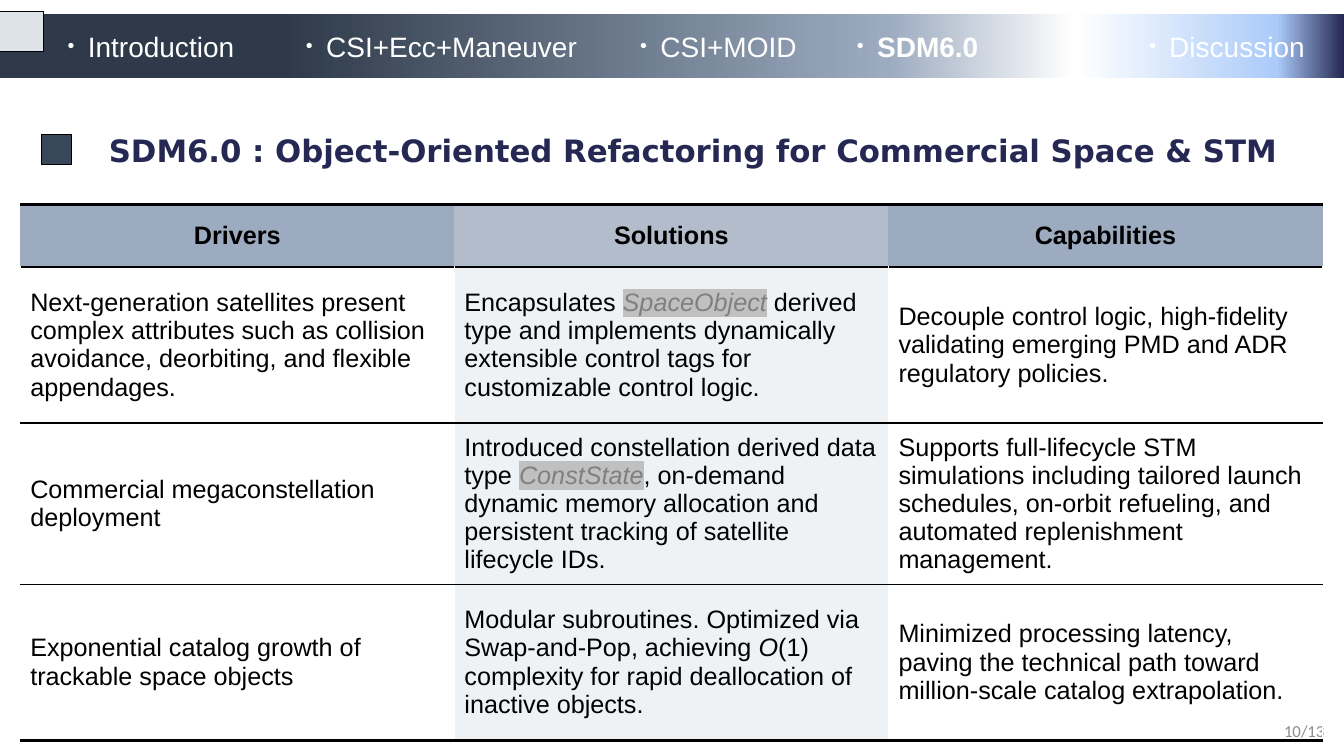
from lxml import etree
from pptx import Presentation
from pptx.dml.color import RGBColor
from pptx.enum.shapes import MSO_SHAPE
from pptx.enum.text import MSO_ANCHOR, MSO_AUTO_SIZE, PP_ALIGN
from pptx.oxml.ns import qn
from pptx.util import Cm, Pt

RECT = MSO_SHAPE.RECTANGLE
TOP, MIDDLE = MSO_ANCHOR.TOP, MSO_ANCHOR.MIDDLE
LEFT, CENTER, RIGHT = PP_ALIGN.LEFT, PP_ALIGN.CENTER, PP_ALIGN.RIGHT

# Content
TITLE = "SDM6.0 : Object-Oriented Refactoring for Commercial Space & STM"
PAGE_NUMBER = "10/13"
SECTIONS = [  # name, left, width
    ("Introduction", 1.04, 5.87),
    ("CSI+Ecc+Maneuver", 6.48, 9.63),
    ("CSI+MOID", 15.62, 5.31),
    ("SDM6.0", 20.88, 4.83),
    ("Discussion", 28.32, 5.54),
]
CURRENT_SECTION = "SDM6.0"
HEADERS = ["Drivers", "Solutions", "Capabilities"]
ROWS = [  # each cell is a list of (text, style) spans
    [
        [("Next-generation satellites present complex attributes such as collision "
          "avoidance, deorbiting, and flexible appendages.", "plain")],
        [("Encapsulates ", "plain"), ("SpaceObject", "code"),
         (" derived type and implements dynamically extensible control tags for "
          "customizable control logic.", "plain")],
        [("Decouple control logic, high-fidelity validating emerging PMD and ADR "
          "regulatory policies.", "plain")],
    ],
    [
        [("Commercial megaconstellation deployment", "plain")],
        [("Introduced constellation derived data type ", "plain"), ("ConstState", "code"),
         (", on-demand dynamic memory allocation and persistent tracking of satellite "
          "lifecycle IDs.", "plain")],
        [("Supports full-lifecycle STM simulations including tailored launch schedules, "
          "on-orbit refueling, and automated replenishment management.", "plain")],
    ],
    [
        [("Exponential catalog growth of trackable space objects", "plain")],
        [("Modular subroutines. Optimized via Swap-and-Pop, achieving ", "plain"),
         ("O", "italic"),
         ("(1) complexity for rapid deallocation of inactive objects.", "plain")],
        [("Minimized processing latency, paving the technical path toward "
          "million-scale catalog extrapolation.", "plain")],
    ],
]

# Formats
BLACK, WHITE, NAVY = "000000", "FFFFFF", "242852"
BAR_STOPS = [(21, "2E3A49"), (66, "9CABC0"), (80, WHITE), (95, "ACCBF9"), (100, NAVY)]
HEADER_FILLS = ["9CABC0", "B2BCCB", "9CABC0"]
BODY_FILLS = [None, "EFF2F5", None]
HIGHLIGHT = "C0C0C0"
BODY_FONT = {"name": "Arial", "size": Pt(18), "bold": False}
STYLES = {
    "header": (BODY_FONT | {"bold": True}, BLACK),
    "plain": (BODY_FONT, BLACK),
    "italic": (BODY_FONT | {"italic": True}, BLACK),
    "code": (BODY_FONT | {"italic": True}, "808080"),
    "section": ({"name": "Arial", "size": Pt(20), "bold": False}, WHITE),
    "current": ({"name": "Arial", "size": Pt(20), "bold": True}, WHITE),
    "title": ({"name": "DejaVu Sans", "size": Pt(22), "bold": True}, NAVY),
    "page": ({"name": "Calibri", "size": Pt(12)}, "8C8C8C"),
}
THICK, THIN = 2.25, 1
NO_STYLE_NO_GRID = "{2D5ABB26-0587-4C30-8999-92F81FD0307C}"

# Layout in centimetres
SLIDE_WIDTH, SLIDE_HEIGHT = 33.87, 19.05
SECTION_TOP, SECTION_HEIGHT = 0.48, 1.35
TABLE_LEFT, TABLE_TOP = 0.51, 5.16
COLUMN_WIDTH, HEADER_HEIGHT, ROW_HEIGHT = 10.94, 1.57, 3.93


def rgb(color):
    return RGBColor.from_string(color)


def set_all(target, values):
    for name, value in values.items():
        setattr(target, name, value)


def add_child(parent, tag, **attributes):
    return etree.SubElement(parent, qn(tag), **attributes)


def add_rect(slide, place, fill=None, line_width=None):
    shape = slide.shapes.add_shape(RECT, *map(Cm, place))
    shape.shadow.inherit = False
    if fill:
        shape.fill.solid()
        shape.fill.fore_color.rgb = rgb(fill)
    if line_width:
        shape.line.color.rgb = rgb(BLACK)
        shape.line.width = Pt(line_width)
    else:
        shape.line.fill.background()
    return shape


def write(para, spans, align):
    para.alignment = align
    for text, style in spans:
        span = para.add_run()
        span.text = text
        font_values, color = STYLES[style]
        set_all(span.font, font_values)
        span.font.color.rgb = rgb(color)
        if style == "code":
            fill = span.font._element.find(qn("a:solidFill"))
            highlight = etree.Element(qn("a:highlight"))
            add_child(highlight, "a:srgbClr", val=HIGHLIGHT)
            fill.addnext(highlight)


def add_text(slide, place, text, style, align):
    box = slide.shapes.add_textbox(*map(Cm, place))
    set_all(box.text_frame, {"word_wrap": True, "vertical_anchor": MIDDLE})
    para = box.text_frame.paragraphs[0]
    write(para, [(text, style)], align)
    return para


def add_bullet(para):
    properties = para._p.get_or_add_pPr()
    properties.set("marL", "0")
    properties.set("indent", str(-Cm(0.51)))
    add_child(properties, "a:buSzPct", val="70000")
    add_child(properties, "a:buFont", typeface="Arial")
    add_child(properties, "a:buChar", char="•")


def fill_cell(cell, spans, align, fill, borders):
    properties = cell._tc.get_or_add_tcPr()
    for side, color, width in borders:
        line = add_child(properties, f"a:ln{side}", w=str(Pt(width)))
        add_child(add_child(line, "a:solidFill"), "a:srgbClr", val=color)
    if fill:
        cell.fill.solid()
        cell.fill.fore_color.rgb = rgb(fill)
    else:
        cell.fill.background()
    cell.vertical_anchor = MIDDLE
    write(cell.text_frame.paragraphs[0], spans, align)


def add_bar(slide):
    bar = add_rect(slide, (0, 0.36, SLIDE_WIDTH, 1.6))
    bar.fill.gradient()
    bar.fill.gradient_angle = 0
    stops = bar._element.spPr.find(qn("a:gradFill")).find(qn("a:gsLst"))
    for stop in list(stops):
        stops.remove(stop)
    for position, color in BAR_STOPS:
        stop = add_child(stops, "a:gs", pos=str(position * 1000))
        add_child(stop, "a:srgbClr", val=color)
    add_rect(slide, (0, 0.28, 1.09, 1.02), "DEE3EA", 0.75)


def add_title(slide):
    add_rect(slide, (1.04, 3.38, 0.76, 0.76), "38475A", 0.5)
    title = slide.shapes.title
    set_all(title, {"left": Cm(2.49), "top": Cm(3.2), "width": Cm(30.86), "height": Cm(1.19)})
    set_all(title.text_frame, {"word_wrap": True, "vertical_anchor": TOP,
                               "auto_size": MSO_AUTO_SIZE.SHAPE_TO_FIT_TEXT})
    write(title.text_frame.paragraphs[0], [(TITLE, "title")], LEFT)


def add_drivers_table(slide):
    heights = [HEADER_HEIGHT] + [ROW_HEIGHT] * len(ROWS)
    place = (TABLE_LEFT, TABLE_TOP, COLUMN_WIDTH * len(HEADERS), sum(heights))
    frame = slide.shapes.add_table(len(heights), len(HEADERS), *map(Cm, place))
    table = frame.table
    set_all(table, {"first_row": False, "horz_banding": False})
    table._tbl.tblPr.find(qn("a:tableStyleId")).text = NO_STYLE_NO_GRID
    for column in table.columns:
        column.width = Cm(COLUMN_WIDTH)
    for row, height in zip(table.rows, heights):
        row.height = Cm(height)
    for col, header in enumerate(HEADERS):
        borders = [("T", BLACK, THICK), ("B", BLACK, THICK)]
        fill_cell(table.cell(0, col), [(header, "header")], CENTER, HEADER_FILLS[col], borders)
    for number, cells in enumerate(ROWS, 1):
        borders = [("L", WHITE, THIN), ("R", WHITE, THIN),
                   ("T", BLACK, THICK if number == 1 else THIN),
                   ("B", BLACK, THICK if number == len(ROWS) else THIN)]
        for col, spans in enumerate(cells):
            fill_cell(table.cell(number, col), spans, LEFT, BODY_FILLS[col], borders)


def main():
    deck = Presentation()
    set_all(deck, {"slide_width": Cm(SLIDE_WIDTH), "slide_height": Cm(SLIDE_HEIGHT)})
    slide = deck.slides.add_slide(deck.slide_layouts[5])
    add_bar(slide)
    add_text(slide, (26.01, 17.91, 7.62, 1.02), PAGE_NUMBER, "page", RIGHT)
    add_title(slide)
    add_drivers_table(slide)
    # Section names in the bar
    for name, left, width in SECTIONS:
        style = "current" if name == CURRENT_SECTION else "section"
        place = (left, SECTION_TOP, width, SECTION_HEIGHT)
        add_bullet(add_text(slide, place, name, style, CENTER))
    deck.save("out.pptx")


if __name__ == "__main__":
    main()
